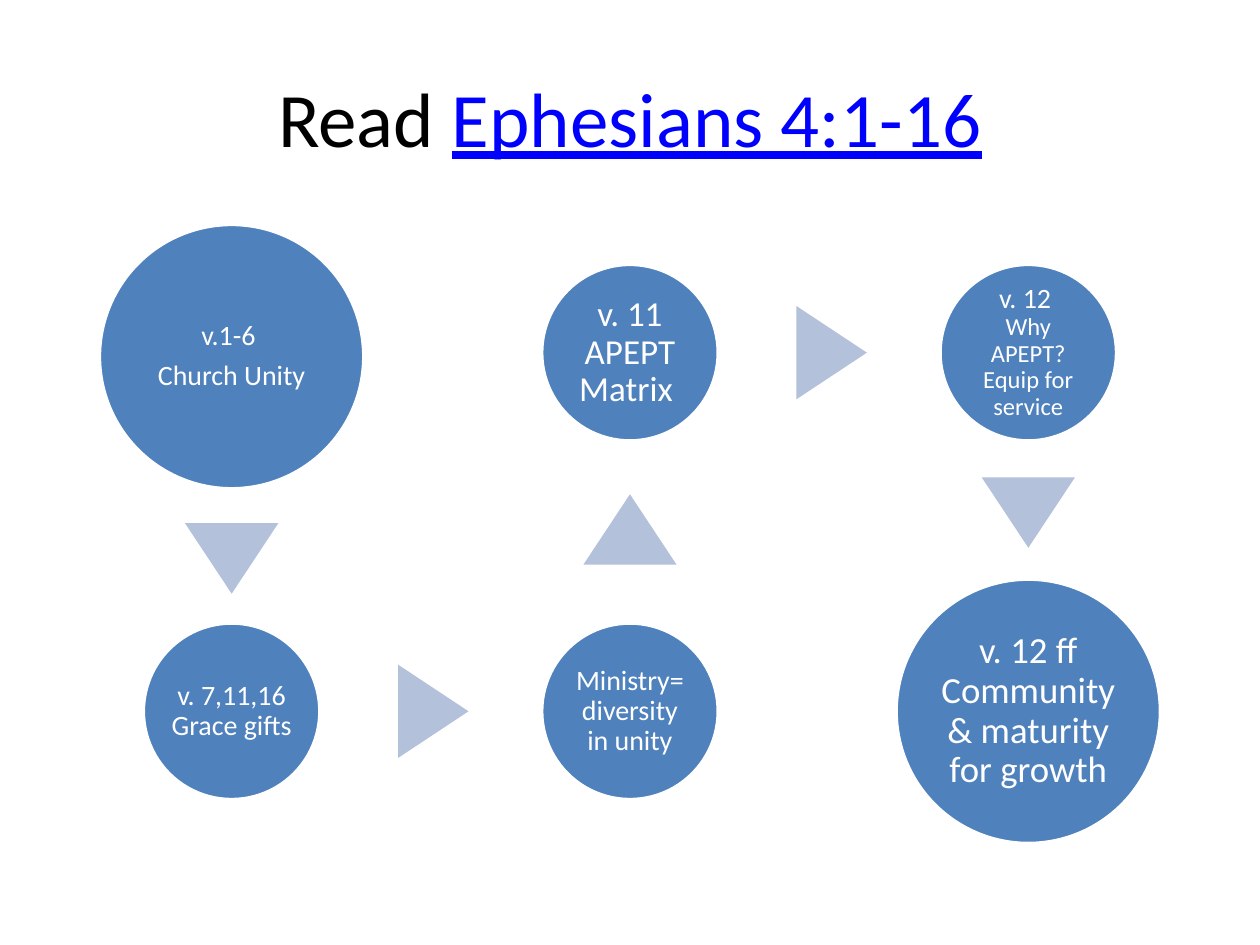
from math import atan2, degrees, hypot

from pptx import Presentation
from pptx.dml.color import RGBColor as Rgb
from pptx.enum.shapes import MSO_SHAPE as Shape
from pptx.enum.text import MSO_ANCHOR as Anchor, PP_ALIGN as Align
from pptx.util import Cm, Pt

COLORS = {"circle": "4F81BD", "arrow": "B3C1DB", "light": "FFFFFF",
          "title": "000000", "reference": "0000FF"}
LEFT, MIDDLE, RIGHT = 4.67, 12.7, 20.73
TOP, BOTTOM = 7.11, 14.34
LARGE, SMALL = 5.33, 3.56
ARROW_WIDTH, ARROW_HEIGHT, ARROW_SHIFT = 1.88, 1.42, 0.05

STEPS = [
    (LEFT, 7.19, LARGE, 0.05, [[("v.1-6 ", 16)], [("Church Unity", 16)]]),
    (LEFT, BOTTOM, SMALL, 0.05, [[("v. 7,11,16 Grace gifts", 16)]]),
    (MIDDLE, BOTTOM, SMALL, 0.05, [[("Ministry= diversity in unity", 16)]]),
    (MIDDLE, TOP, SMALL, 0.07, [[("v. 11 APEPT Matrix ", 20)]]),
    (RIGHT, TOP, SMALL, 0.05,
     [[("v. 12 ", 16), ("Why APEPT? Equip for service", 14)]]),
    (RIGHT, BOTTOM, LARGE, 0.07,
     [[("v. 12 ff Community & maturity for growth", 21)]]),
]


def apply_format(target, values):
    """Set each attribute named in values on the target."""
    for name, value in values.items():
        setattr(target, name, value)


def add_span(para, text, size, color, underline=None):
    """Append one formatted run to a paragraph."""
    span = para.add_run()
    span.text = text
    apply_format(span.font, {"name": "Calibri", "size": Pt(size), "underline": underline})
    span.font.color.rgb = Rgb.from_string(COLORS[color])


def add_title(page):
    """Place and fill the title placeholder."""
    title = page.shapes.title
    apply_format(title, {"left": Cm(1.27), "top": Cm(0.76),
                         "width": Cm(22.86), "height": Cm(3.18)})
    title.text_frame.vertical_anchor = Anchor.MIDDLE
    para = title.text_frame.paragraphs[0]
    para.alignment = Align.CENTER
    add_span(para, "Read ", 44, "title")
    add_span(para, "Ephesians 4:1-16", 44, "reference", True)


def add_centred(page, kind, x, y, width, height, color):
    """Add a filled preset shape around a centre point."""
    shape = page.shapes.add_shape(kind, Cm(x - width / 2), Cm(y - height / 2),
                                  Cm(width), Cm(height))
    shape.shadow.inherit = False
    shape.fill.solid()
    shape.fill.fore_color.rgb = Rgb.from_string(COLORS[color])
    return shape


def add_step(page, x, y, size, inset, paragraphs):
    """Add a circle with its text."""
    circle = add_centred(page, Shape.OVAL, x, y, size, size, "circle")
    circle.line.color.rgb = Rgb.from_string(COLORS["light"])
    circle.line.width = Pt(2)
    frame = circle.text_frame
    margins = {f"margin_{side}": Cm(inset) for side in ("left", "top", "right", "bottom")}
    apply_format(frame, {"word_wrap": True, "vertical_anchor": Anchor.MIDDLE, **margins})
    for index, spans in enumerate(paragraphs):
        para = frame.add_paragraph() if index else frame.paragraphs[0]
        apply_format(para, {"alignment": Align.CENTER, "line_spacing": 0.9,
                            "space_after": Pt(5.6)})
        for position, (text, points) in enumerate(spans):
            if position:
                para.add_line_break()
            add_span(para, text, points, "light")


def add_arrow(page, start, end):
    """Add a triangle in the gap between two steps, pointing to the second."""
    (x1, y1, size1), (x2, y2, size2) = start[:3], end[:3]
    dx, dy = x2 - x1, y2 - y1
    length = hypot(dx, dy)
    share = (length / 2 + (size1 - size2) / 4 + ARROW_SHIFT) / length
    arrow = add_centred(page, Shape.ISOSCELES_TRIANGLE, x1 + dx * share, y1 + dy * share,
                        ARROW_WIDTH, ARROW_HEIGHT, "arrow")
    arrow.line.fill.background()
    arrow.rotation = degrees(atan2(dy, dx)) + 90


def main():
    """Build and save the deck."""
    deck = Presentation()
    apply_format(deck, {"slide_width": Cm(25.4), "slide_height": Cm(19.05)})
    page = deck.slides.add_slide(deck.slide_layouts[5])
    add_title(page)
    for step in STEPS:
        add_step(page, *step)
    for start, end in zip(STEPS, STEPS[1:]):
        add_arrow(page, start, end)
    deck.save("out.pptx")


if __name__ == "__main__":
    main()
